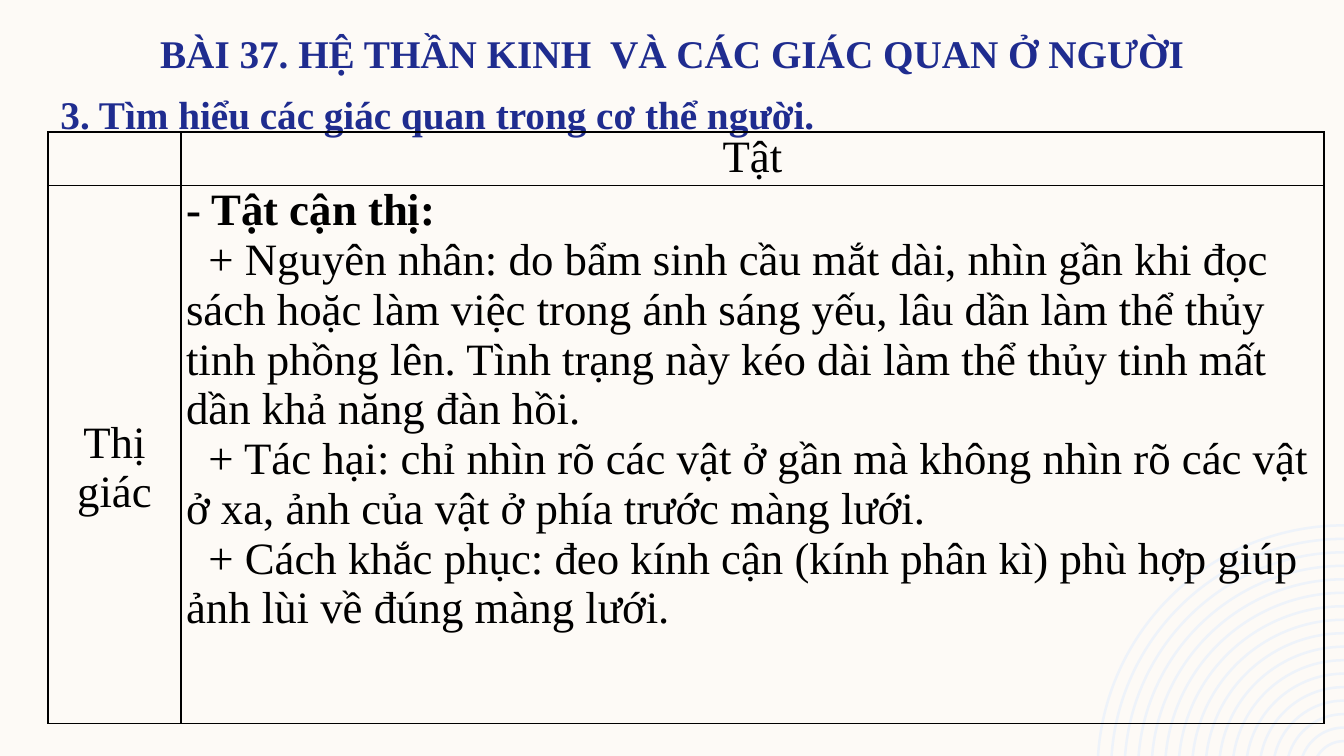
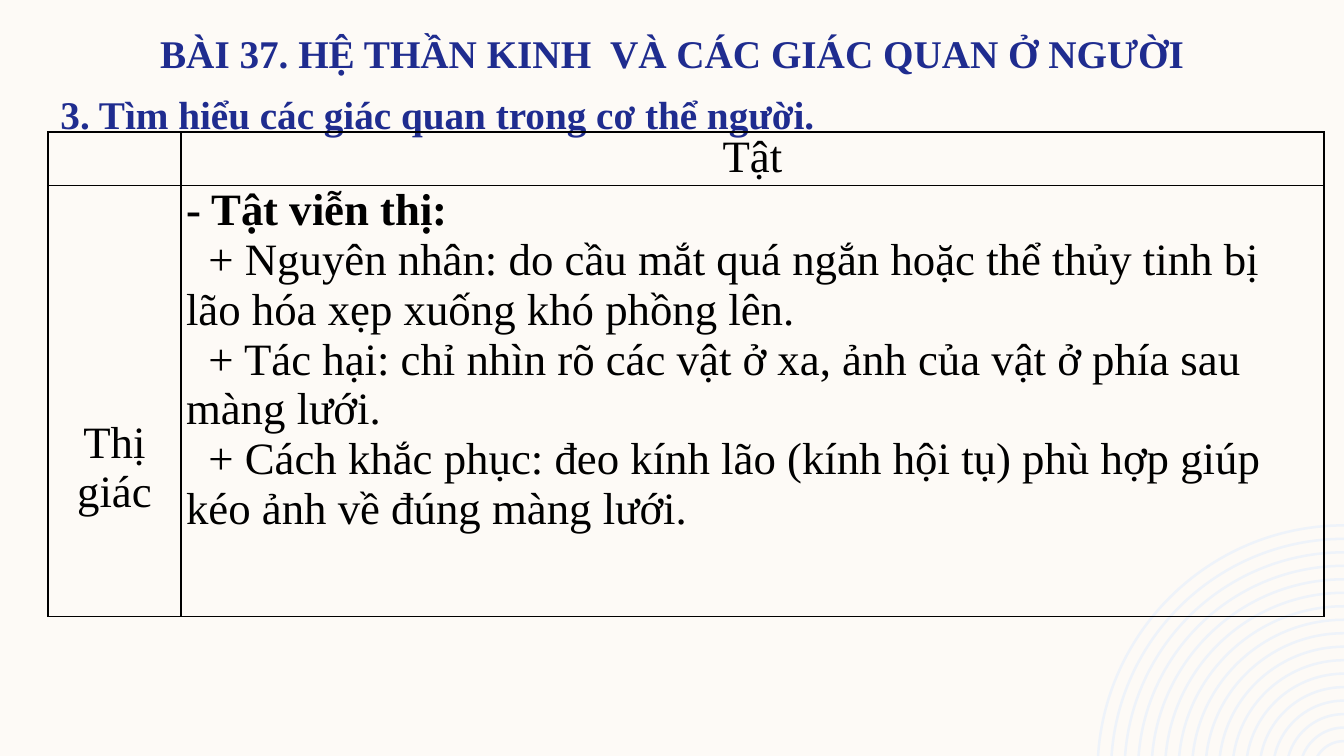
import math
import pptx
import pptx.util
import pptx.dml.color
import pptx.enum.text
import pptx.oxml
import pptx.oxml.ns

Pt = pptx.util.Pt
qn = pptx.oxml.ns.qn
ALIGN = pptx.enum.text.PP_ALIGN
COLORS = {"cream": "FDFAF6", "rings": "EEF3FA", "navy": "1F2C8F", "black": "000000"}
FONT = "Times New Roman"
LESSON = "BÀI 37. HỆ THẦN KINH  VÀ CÁC GIÁC QUAN Ở NGƯỜI"
SECTION = "3. Tìm hiểu các giác quan trong cơ thể người."
DEFECTS = [
    (384, [
        "- Tật cận thị:",
        "+ Nguyên nhân: do bẩm sinh cầu mắt dài, nhìn gần khi đọc sách hoặc làm việc "
        "trong ánh sáng yếu, lâu dần làm thể thủy tinh phồng lên. Tình trạng này kéo "
        "dài làm thể thủy tinh mất dần khả năng đàn hồi.",
        "+ Tác hại: chỉ nhìn rõ các vật ở gần mà không nhìn rõ các vật ở xa, ảnh của "
        "vật ở phía trước màng lưới.",
        "+ Cách khắc phục: đeo kính cận (kính phân kì) phù hợp giúp ảnh lùi về đúng "
        "màng lưới.",
    ]),
    (307.5, [
        "- Tật viễn thị:",
        "+ Nguyên nhân: do cầu mắt quá ngắn hoặc thể thủy tinh bị lão hóa xẹp xuống "
        "khó phồng lên.",
        "+ Tác hại: chỉ nhìn rõ các vật ở xa, ảnh của vật ở phía sau màng lưới.",
        "+ Cách khắc phục: đeo kính lão (kính hội tụ) phù hợp giúp kéo ảnh về đúng "
        "màng lưới.",
    ]),
]


def rgb(name):
    return pptx.dml.color.RGBColor.from_string(COLORS[name])


def write(paragraph, text, size, color, bold=False, align=ALIGN.LEFT):
    paragraph.text = text
    paragraph.alignment = align
    for run in paragraph.runs:
        run.font.name = FONT
        run.font.size = Pt(size)
        run.font.bold = bold
        run.font.color.rgb = rgb(color)


prs = pptx.Presentation()
prs.slide_width, prs.slide_height = Pt(960), Pt(540)

# Shared layout: background and the two heading lines
layout = prs.slide_layouts[1]
layout.background.fill.solid()
layout.background.fill.fore_color.rgb = rgb("cream")
heading_boxes = {0: (0, 5.8, 960, 46.8), 1: (36, 49, 888, 46.8)}
for holder in list(layout.placeholders):
    box = heading_boxes.get(holder.placeholder_format.idx)
    if box is None:
        holder.element.getparent().remove(holder.element)
        continue
    holder.left, holder.top, holder.width, holder.height = map(Pt, box)
    frame = holder.text_frame
    frame.margin_left = frame.margin_right = Pt(7.2)
    frame.margin_top, frame.margin_bottom = 0, Pt(3.6)
    frame.vertical_anchor = pptx.enum.text.MSO_ANCHOR.TOP
    frame.auto_size = pptx.enum.text.MSO_AUTO_SIZE.NONE

slides = [prs.slides.add_slide(layout) for _ in DEFECTS]

# Concentric rings in the corner, cut off by the slide edges, kept on the layout
center_x, center_y, outer_radius = 960, 551.3, 176.9
ring_count, ring_step, ring_width = 17, 9.63, 1.8
builder = None
for ring in range(ring_count):
    outline = []
    for inset in (0, ring_width):
        r = outer_radius - ring * ring_step - inset
        low = math.asin((center_y - 540) / r)
        reach = r * 4 / 3 * math.tan((math.pi / 2 - low) / 4)
        x, y = center_x - r * math.cos(low), 540
        top = center_y - r
        arc = [(x, y), (x + reach * math.sin(low), y - reach * math.cos(low)),
               (center_x - reach, top), (center_x, top)]
        outline += arc[::-1] if inset else arc
    outline = [(Pt(x), Pt(y)) for x, y in outline]
    if builder is None:
        builder = slides[0].shapes.build_freeform(*outline[0])
    else:
        builder.move_to(*outline[0])
    builder.add_line_segments(outline[1:], close=True)
rings = builder.convert_to_shape()
rings.shadow.inherit = False
rings.fill.solid()
rings.fill.fore_color.rgb = rgb("rings")
rings.line.fill.background()

# Each ring has seven segments: outer curve (three), straight end, inner curve (three)
segments = list(rings.element.iter(qn("a:lnTo")))
for start in range(0, len(segments), 7):
    for first in (start, start + 4):
        curve = pptx.oxml.parse_xml(f'<a:cubicBezTo {pptx.oxml.ns.nsdecls("a")}/>')
        segments[first].addprevious(curve)
        for segment in segments[first:first + 3]:
            curve.append(segment[0])
            segment.getparent().remove(segment)
layout.shapes.element.append(rings.element)

for slide, (body_height, lines) in zip(slides, DEFECTS):
    # Headings
    lesson = slide.shapes.title.text_frame.paragraphs[0]
    section = slide.placeholders[1].text_frame.paragraphs[0]
    properties = section._p.get_or_add_pPr()
    properties.set("marL", "0")
    properties.set("indent", "0")
    properties.append(pptx.oxml.parse_xml(
        f'<a:buNone {pptx.oxml.ns.nsdecls("a")}/>'))
    write(lesson, LESSON, 28, "navy", True, ALIGN.CENTER)
    write(section, SECTION, 28, "navy", True)
    for heading in (lesson, section):
        heading.line_spacing = Pt(48.8)
        heading.space_before = Pt(0)

    # Table with plain black borders
    table_frame = slide.shapes.add_table(
        2, 2, Pt(34.3), Pt(94.3), Pt(911.5), Pt(38.4 + body_height))
    table = table_frame.table
    table.first_row = table.horz_banding = False
    table.columns[0].width, table.columns[1].width = Pt(95), Pt(816.5)
    table.rows[0].height, table.rows[1].height = Pt(38.4), Pt(body_height)
    for cell_properties in table_frame.element.iter(qn("a:tcPr")):
        for side in ("lnL", "lnR", "lnT", "lnB"):
            cell_properties.append(pptx.oxml.parse_xml(
                f'<a:{side} {pptx.oxml.ns.nsdecls("a")} w="{Pt(1)}"><a:solidFill>'
                f'<a:srgbClr val="{COLORS["black"]}"/></a:solidFill></a:{side}>'))
    for cell in table.iter_cells():
        cell.fill.background()
        cell.margin_left = cell.margin_right = Pt(3.6)
        cell.margin_top = cell.margin_bottom = 0

    # Table text
    write(table.cell(0, 1).text_frame.paragraphs[0], "Tật", 32, "black",
          align=ALIGN.CENTER)
    sense = table.cell(1, 0)
    sense.margin_top = Pt(166)
    write(sense.text_frame.paragraphs[0], "Thị giác", 32, "black", align=ALIGN.CENTER)
    details = table.cell(1, 1).text_frame
    details.text = "\n".join(lines)
    for number, (paragraph, line) in enumerate(zip(details.paragraphs, lines)):
        write(paragraph, line, 32, "black", bold=number == 0)
        if number:
            paragraph._p.get_or_add_pPr().set("indent", str(Pt(16)))

prs.save("out.pptx")
